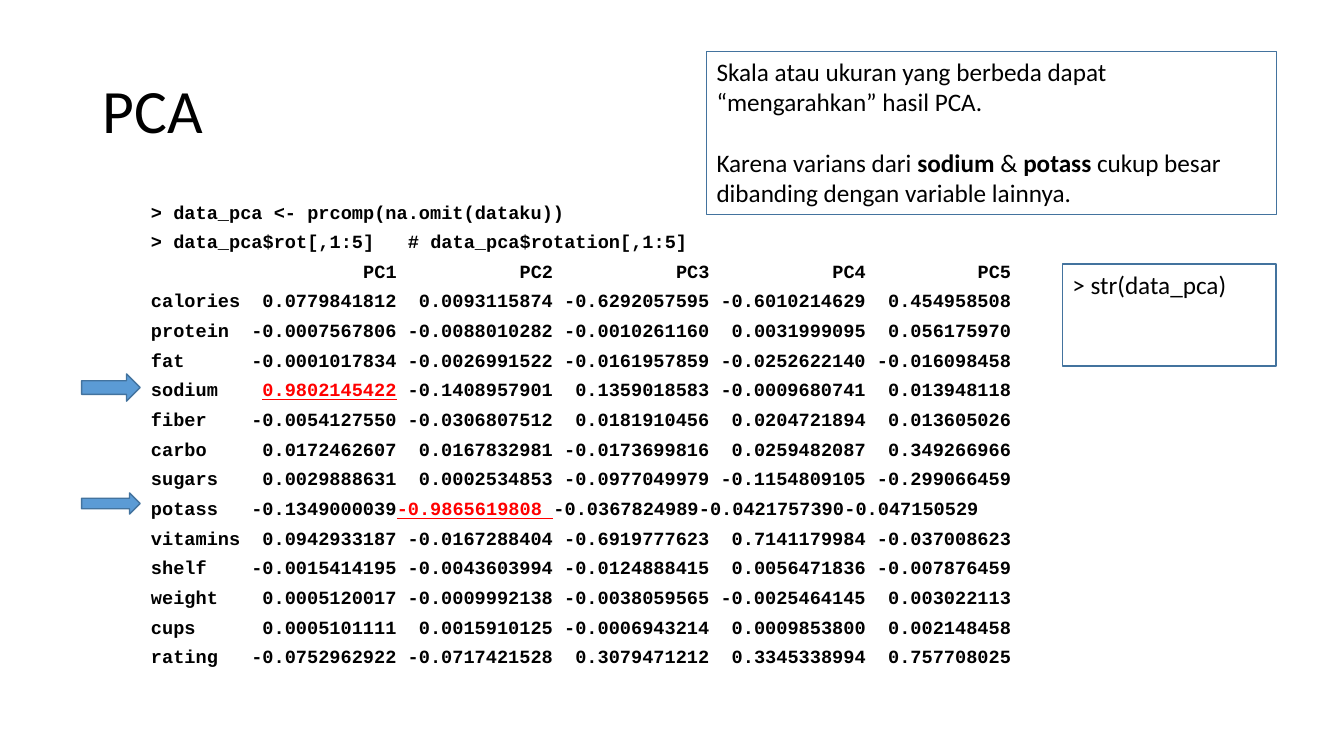
"""Build a slide showing PCA loadings as console output with two callouts."""
from lxml import etree
from pptx import Presentation
from pptx import util as u
from pptx.dml.color import RGBColor
from pptx.enum import shapes, text
from pptx.oxml.ns import qn

Pt = u.Pt
BLACK = RGBColor(0x00, 0x00, 0x00)
RED = RGBColor(0xFF, 0x00, 0x00)
BLUE = RGBColor(0x5B, 0x9B, 0xD5)
DARK_BLUE = RGBColor(0x43, 0x73, 0x9E)
SANS, MONO = "Calibri", "Courier New"

TITLE = "PCA"
COMMANDS = [
    "> data_pca <- prcomp(na.omit(dataku))",
    "> data_pca$rot[,1:5]\t# data_pca$rotation[,1:5]",
]
LOADINGS = [
    ("", "PC1", "PC2", "PC3", "PC4", "PC5"),
    ("calories", "0.0779841812", "0.0093115874", "-0.6292057595", "-0.6010214629", "0.454958508"),
    ("protein", "-0.0007567806", "-0.0088010282", "-0.0010261160", "0.0031999095", "0.056175970"),
    ("fat", "-0.0001017834", "-0.0026991522", "-0.0161957859", "-0.0252622140", "-0.016098458"),
    ("sodium", "0.9802145422", "-0.1408957901", "0.1359018583", "-0.0009680741", "0.013948118"),
    ("fiber", "-0.0054127550", "-0.0306807512", "0.0181910456", "0.0204721894", "0.013605026"),
    ("carbo", "0.0172462607", "0.0167832981", "-0.0173699816", "0.0259482087", "0.349266966"),
    ("sugars", "0.0029888631", "0.0002534853", "-0.0977049979", "-0.1154809105", "-0.299066459"),
    ("potass", "-0.1349000039", "-0.9865619808", "-0.0367824989", "-0.0421757390", "-0.047150529"),
    ("vitamins", "0.0942933187", "-0.0167288404", "-0.6919777623", "0.7141179984", "-0.037008623"),
    ("shelf", "-0.0015414195", "-0.0043603994", "-0.0124888415", "0.0056471836", "-0.007876459"),
    ("weight", "0.0005120017", "-0.0009992138", "-0.0038059565", "-0.0025464145", "0.003022113"),
    ("cups", "0.0005101111", "0.0015910125", "-0.0006943214", "0.0009853800", "0.002148458"),
    ("rating", "-0.0752962922", "-0.0717421528", "0.3079471212", "0.3345338994", "0.757708025"),
]
DOMINANT = {"0.9802145422": "", "-0.9865619808": " "}
EXPLANATION = [
    [("Skala atau ukuran yang berbeda dapat “mengarahkan” hasil PCA.", False)],
    [("Karena varians dari ", False), ("sodium", True), (" & ", False),
     ("potass ", True), ("cukup besar dibanding dengan variable lainnya.", False)],
]
HINT = [[("> str(data_pca)", False)]]
CALLOUTS = [
    ((504.72, 36.72, 406.8, 116.64), 0.75, EXPLANATION),
    ((758.88, 188.64, 152.64, 72.72), 1, HINT),
]
ARROWS = [(58.32, 267.12, 41.76, 19.44), (58.32, 352.08, 41.76, 15.12)]

CODE_SIZE = 13.3
CHAR = CODE_SIZE * 0.6
COLUMN_ENDS = [22, 36, 50, 64, 77]
COMMENT_START = 23


def add_run(p, words, size, font=SANS, bold=False, color=BLACK):
    r = p.add_run()
    r.text = words
    r.font.name, r.font.size, r.font.bold = font, Pt(size), bold
    r.font.color.rgb = color
    return r


def add_text_box(s, box):
    tf = s.shapes.add_textbox(*map(Pt, box)).text_frame
    tf.word_wrap = True
    return tf


def add_preset(s, kind, box, weight):
    sp = s.shapes.add_shape(kind, *map(Pt, box))
    sp.shadow.inherit = False
    sp.line.color.rgb, sp.line.width = DARK_BLUE, Pt(weight)
    return sp


def next_paragraph(tf, index):
    return tf.add_paragraph() if index else tf.paragraphs[0]


def set_tabs(p, columns, align):
    tabs = etree.SubElement(p._p.get_or_add_pPr(), qn("a:tabLst"))
    for column in columns:
        etree.SubElement(tabs, qn("a:tab"), pos=str(int(Pt(column * CHAR))), algn=align)


def split_row(row):
    """Return (words, is_dominant) pieces of a row joined by tabs."""
    pieces, plain, lead = [], row[0], "\t"
    for value in row[1:]:
        plain += lead
        lead = "\t"
        if value in DOMINANT:
            tail = DOMINANT[value]
            pieces += [(plain, False), (value + tail, True)]
            plain, lead = "", "" if tail else "\t"
        else:
            plain += value
    return pieces + [(plain, False)]


def add_console(s):
    tf = add_text_box(s, (100.8, 144, 828, 342.72))
    lines = [([(c, False)], [COMMENT_START], "l") for c in COMMANDS]
    lines += [(split_row(row), COLUMN_ENDS, "r") for row in LOADINGS]
    for i, (pieces, columns, align) in enumerate(lines):
        p = next_paragraph(tf, i)
        p.line_spacing, p.space_before = 0.7, Pt(10)
        set_tabs(p, columns, align)
        for words, dominant in pieces:
            r = add_run(p, words, CODE_SIZE, MONO, True, RED if dominant else BLACK)
            r.font.underline = dominant


def add_callout(s, box, weight, paragraphs):
    sp = add_preset(s, shapes.MSO_SHAPE.RECTANGLE, box, weight)
    sp.fill.background()
    tf = sp.text_frame
    tf.word_wrap, tf.vertical_anchor = True, text.MSO_ANCHOR.TOP
    for i, runs in enumerate(paragraphs):
        p = next_paragraph(tf, i)
        p.alignment = text.PP_ALIGN.LEFT
        p.space_before = Pt(21.8 if i else 0)
        for words, bold in runs:
            add_run(p, words, 18, bold=bold)


def main():
    prs = Presentation()
    prs.slide_width, prs.slide_height = Pt(960), Pt(540)
    s = prs.slides.add_slide(prs.slide_layouts[6])
    tf = add_text_box(s, (66.24, 28.8, 828, 104.4))
    tf.vertical_anchor = text.MSO_ANCHOR.MIDDLE
    tf.paragraphs[0].line_spacing = 0.9
    add_run(tf.paragraphs[0], TITLE, 44)
    add_console(s)
    for box, weight, paragraphs in CALLOUTS:
        add_callout(s, box, weight, paragraphs)
    for box in ARROWS:
        sp = add_preset(s, shapes.MSO_SHAPE.RIGHT_ARROW, box, 1)
        sp.fill.solid()
        sp.fill.fore_color.rgb = BLUE
    prs.save("out.pptx")


if __name__ == "__main__":
    main()
